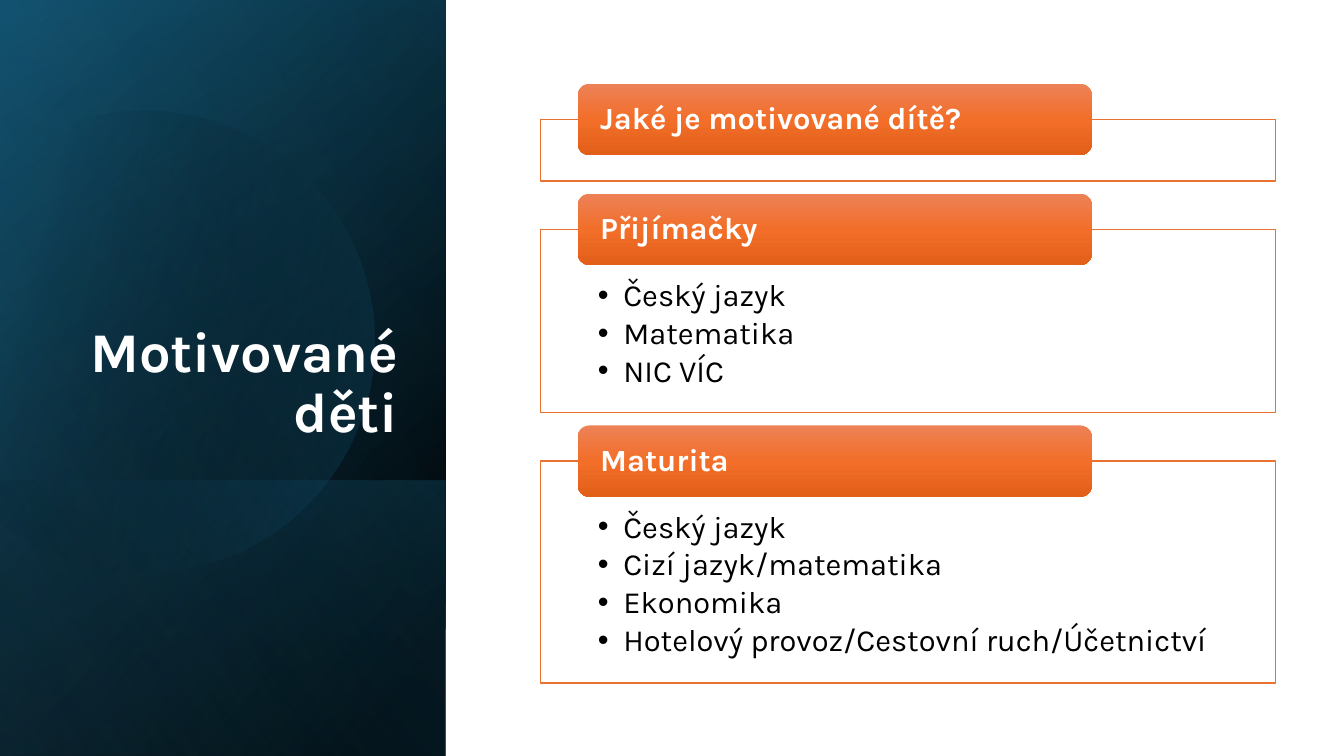
import math

import lxml.etree
import pptx
import pptx.dml.color
import pptx.enum.shapes
import pptx.enum.text
import pptx.oxml.ns
import pptx.util

Cm, Pt = pptx.util.Cm, pptx.util.Pt
qn = pptx.oxml.ns.qn
RGB = pptx.dml.color.RGBColor.from_string
Shape = pptx.enum.shapes.MSO_SHAPE
Anchor = pptx.enum.text.MSO_ANCHOR
FONT = "Karla"
COLORS = {
    "black": "000000", "white": "FFFFFF", "navy": "104862", "teal": "156082",
    "sky": "46B1E1", "orange": "E97132", "light": "ED8257", "middle": "F26E29", "deep": "E25F1A",
}


def paint_gradient(shape, angle, stops):
    """Fill a borderless shape; each stop is position, colour name, opacity."""
    shape.shadow.inherit = False
    shape.line.fill.background()
    shape.fill.gradient()
    gradient = shape.element.spPr.find(qn("a:gradFill"))
    stop_list = gradient.find(qn("a:gsLst"))
    for old_stop in list(stop_list):
        stop_list.remove(old_stop)
    for position, color, opacity in stops:
        stop = lxml.etree.SubElement(stop_list, qn("a:gs"), pos=str(position * 1000))
        tone = lxml.etree.SubElement(stop, qn("a:srgbClr"), val=COLORS[color])
        lxml.etree.SubElement(tone, qn("a:alpha"), val=str(opacity * 1000))
    direction = gradient.find(qn("a:lin"))
    direction.set("ang", str(angle * 60000))
    direction.set("scaled", "0")


def style_paragraph(para, size, color, bold):
    para.line_spacing = 0.9
    para.space_before = Pt(0)
    para.font.name = FONT
    para.font.size = Pt(size)
    para.font.bold = bold
    para.font.color.rgb = RGB(COLORS[color])


deck = pptx.Presentation()
deck.slide_width, deck.slide_height = Cm(33.87), Cm(19.05)
page = deck.slides.add_slide(deck.slide_layouts[3])  # title and two lists

# Left panel: turned, mirrored rectangles with a cut circle under the last one
full = (-3.91, 3.91, 19.05, 11.23)
panels = [
    (full, 50, [(8, "black", 100), (100, "navy", 100)]),
    (full, 30, [(0, "black", 0), (99, "teal", 46)]),
    ((2.13, 9.98, 6.96, 11.23), 130, [(2, "teal", 29), (100, "black", 30)]),
    (None, 30, [(29, "black", 0), (100, "teal", 43)]),
    (full, 120, [(0, "black", 0), (99, "sky", 11)]),
]
center_x, center_y, radius = Cm(3.61), Cm(8.5), Cm(5.81)
angles = [math.radians(angle) for angle in (-118, -90, 0, 90, 150)]
corners = [
    (round(center_x + radius * math.cos(angle)), round(center_y + radius * math.sin(angle)))
    for angle in angles
]
for frame, direction, stops in panels:
    if frame:
        panel = page.shapes.add_shape(Shape.RECTANGLE, *map(Cm, frame))
        panel.rotation = 90
        panel.element.spPr.find(qn("a:xfrm")).set("flipH", "1")
    else:
        outline = page.shapes.build_freeform(*corners[0])
        outline.add_line_segments(corners[1:], close=True)
        panel = outline.convert_to_shape()
        # Bend the straight sides into arcs
        sides = list(panel.element.spPr.iter(qn("a:lnTo")))
        for number, side in enumerate(sides):
            start, end = angles[number:number + 2]
            reach = radius * 4 / 3 * math.tan((end - start) / 4)
            curve = lxml.etree.Element(qn("a:cubicBezTo"))
            for (x, y), angle, pull in ((corners[number], start, reach),
                                        (corners[number + 1], end, -reach),
                                        (corners[number + 1], end, 0)):
                lxml.etree.SubElement(
                    curve, qn("a:pt"),
                    x=str(round(x - panel.left - pull * math.sin(angle))),
                    y=str(round(y - panel.top + pull * math.cos(angle))))
            side.getparent().replace(side, curve)
        panel.rotation = -16.1
    paint_gradient(panel, direction, stops)

# Title, raised above the panel
title = page.shapes.title
title.element.getparent().append(title.element)
title.left, title.top, title.width, title.height = map(Cm, (1.22, 4.69, 9.07, 6.65))
title.text_frame.text = "Motivované děti"
title.text_frame.auto_size = pptx.enum.text.MSO_AUTO_SIZE.NONE
title.text_frame.vertical_anchor = Anchor.BOTTOM
title.text_frame.paragraphs[0].alignment = pptx.enum.text.PP_ALIGN.RIGHT
style_paragraph(title.text_frame.paragraphs[0], 40, "white", True)

# Cards: frame, list, heading
cards = [
    ("Jaké je motivované dítě?", 1.55, []),
    ("Přijímačky", 4.62, ["Český jazyk", "Matematika", "NIC VÍC"]),
    ("Maturita", 5.59, ["Český jazyk", "Cizí jazyk/matematika", "Ekonomika",
                        "Hotelový provoz/Cestovní ruch/Účetnictví"]),
]
list_boxes = iter([page.placeholders[1], page.placeholders[2]])
left, width, gap = 13.62, 18.52, 1.22
top = 3.01
for heading, height, items in cards:
    place = [Cm(length) for length in (left, top, width, height)]
    frame = page.shapes.add_shape(Shape.RECTANGLE, *place)
    frame.shadow.inherit = False
    frame.fill.solid()
    frame.fill.fore_color.rgb = RGB(COLORS["white"])
    frame.line.color.rgb = RGB(COLORS["orange"])
    frame.line.width = Pt(1)

    if items:
        box = next(list_boxes)
        box.element.getparent().append(box.element)
        box.left, box.top, box.width, box.height = place
        text = box.text_frame
        text.text = "\n".join(items)
        text.auto_size = pptx.enum.text.MSO_AUTO_SIZE.NONE
        text.margin_left = text.margin_right = Cm(1.45)
        text.margin_top, text.margin_bottom = Cm(1.27), Cm(0.43)
        for para in text.paragraphs:
            properties = para._p.get_or_add_pPr()
            properties.set("marL", str(Cm(0.64)))
            properties.set("indent", str(-Cm(0.64)))
            para.space_after = Pt(3.3)
            style_paragraph(para, 22, "black", False)

    banner = page.shapes.add_shape(
        Shape.ROUNDED_RECTANGLE, Cm(14.56), Cm(top - 0.9), Cm(12.96), Cm(1.8))
    paint_gradient(banner, 90, [(0, "light", 100), (50, "middle", 100), (100, "deep", 100)])
    text = banner.text_frame
    text.text = heading
    text.vertical_anchor = Anchor.MIDDLE
    text.margin_left = text.margin_right = Cm(0.48)
    text.margin_top = text.margin_bottom = 0
    text.paragraphs[0].alignment = pptx.enum.text.PP_ALIGN.LEFT
    style_paragraph(text.paragraphs[0], 22, "white", True)
    top += height + gap

deck.save("out.pptx")
